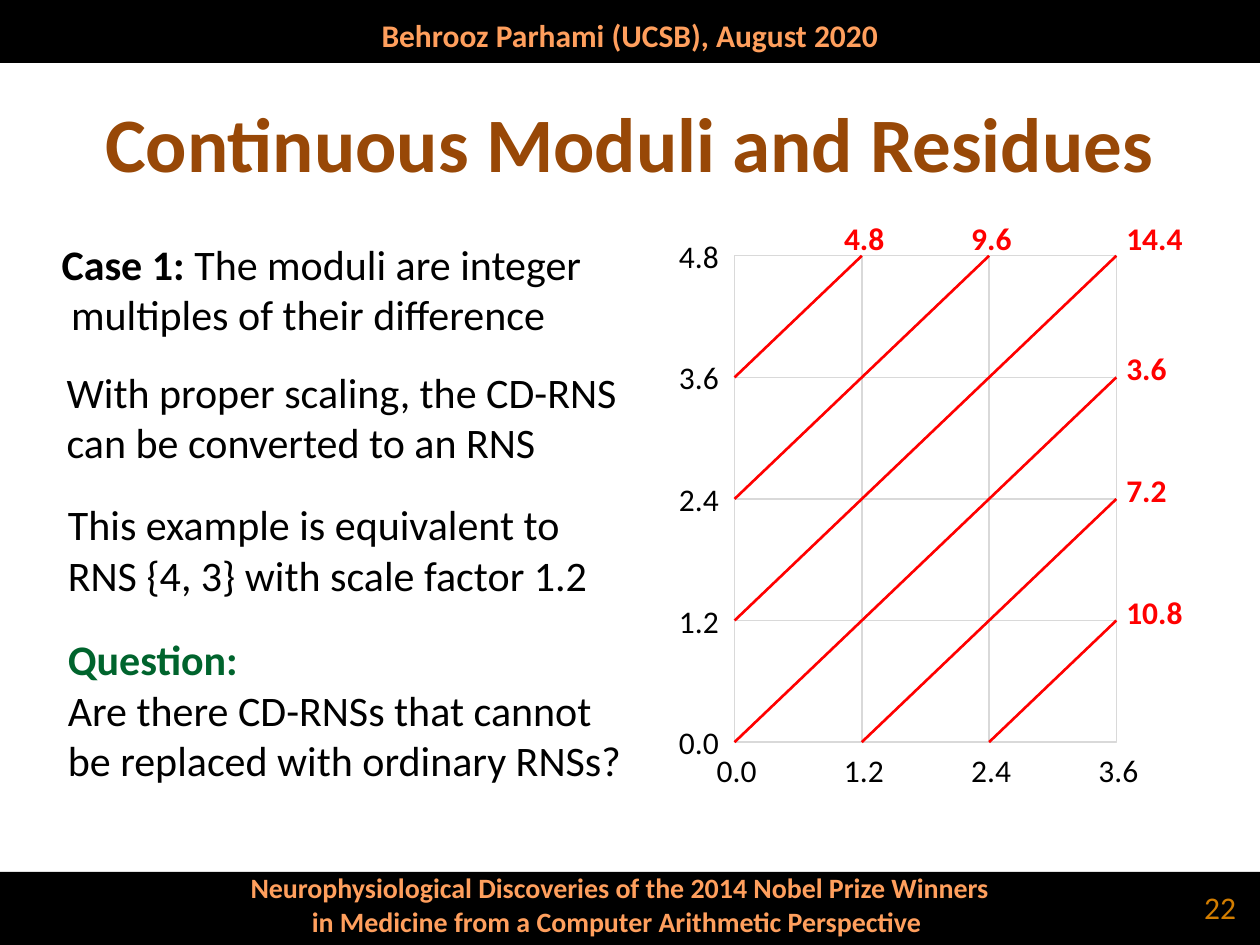
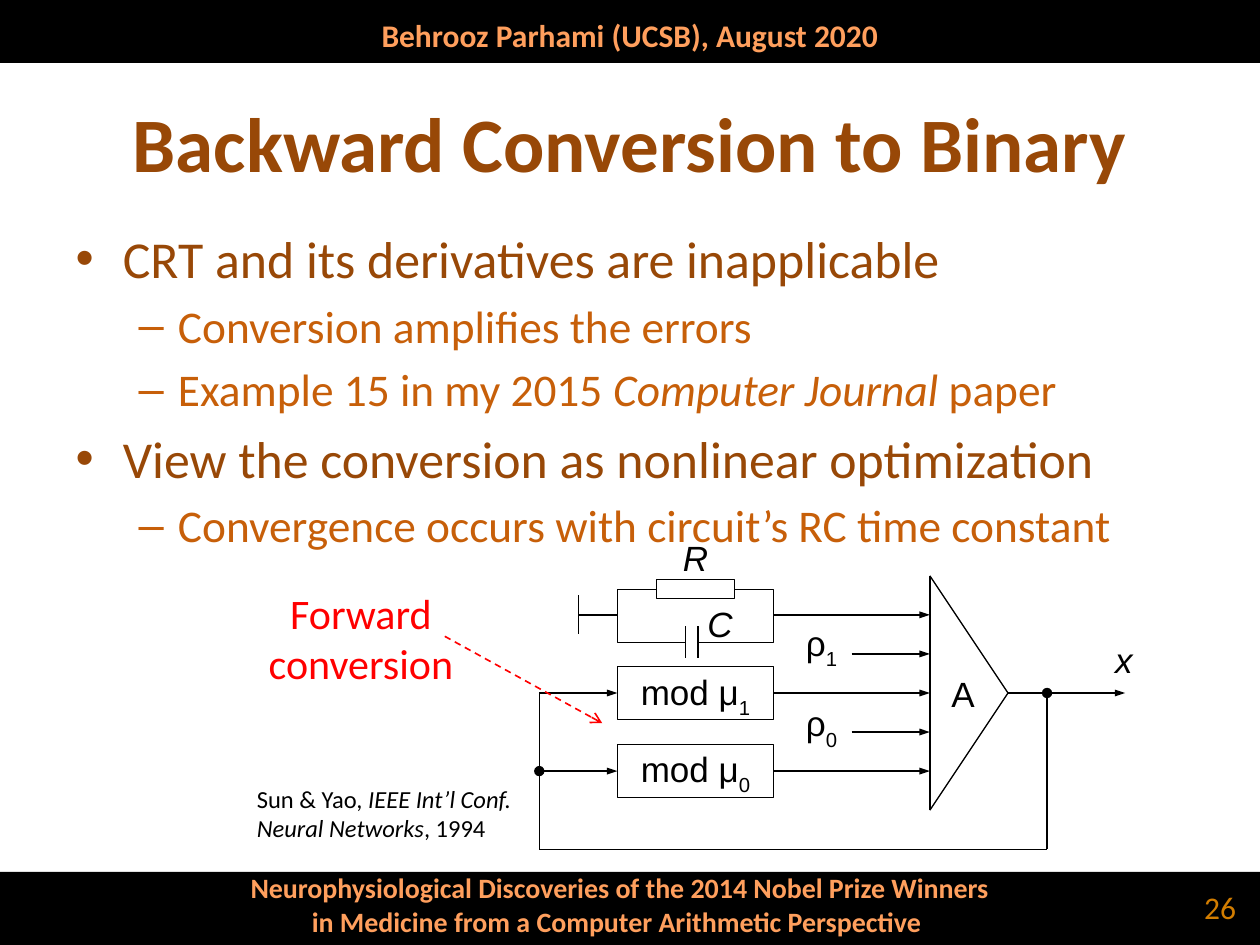
"""Build two lecture slides on residue number systems with continuous moduli."""
import pptx
import pptx.dml.color
import pptx.enum.dml
import pptx.enum.shapes
import pptx.enum.text
import pptx.oxml
import pptx.oxml.ns
import pptx.util

COLOURS = {
    "black": "000000", "white": "FFFFFF", "band text": "FF9F5D", "title": "984807",
    "detail": "C75F09", "number": "D27D00", "grid": "D9D9D9", "red": "FF0000", "green": "00642D",
}
RGB = {name: pptx.dml.color.RGBColor.from_string(code) for name, code in COLOURS.items()}
LEFT, CENTER, RIGHT = (pptx.enum.text.PP_ALIGN.LEFT, pptx.enum.text.PP_ALIGN.CENTER,
                       pptx.enum.text.PP_ALIGN.RIGHT)
TOP, MIDDLE = pptx.enum.text.MSO_ANCHOR.TOP, pptx.enum.text.MSO_ANCHOR.MIDDLE
WIDTH, HEIGHT = 10, 7.5
FOOTER_TOP = 6.92


def write(shape, paragraphs, size, colour="black", font="Calibri", align=LEFT, anchor=TOP):
    """Fill a shape with paragraphs, each a list of (text, style words) runs."""
    frame = shape.text_frame
    frame.word_wrap = True
    frame.auto_size = pptx.enum.text.MSO_AUTO_SIZE.NONE
    frame.vertical_anchor = anchor
    for index, runs in enumerate(paragraphs):
        paragraph = frame.paragraphs[0] if index == 0 else frame.add_paragraph()
        paragraph.alignment = align
        for text, style in runs:
            run = paragraph.add_run()
            run.text = text
            run.font.name = font
            run.font.size = pptx.util.Pt(size)
            run.font.bold = "bold" in style
            run.font.italic = "italic" in style
            run.font.color.rgb = RGB["green" if "green" in style else colour]
            if "sub" in style:
                run.font._element.set("baseline", "-30000")
    return frame


def draw(slide, start, end, line="black", weight=0.75, fill=None, head=None, tail=None):
    """Draw a filled rectangle between two corners, or a line when there is no fill."""
    (x1, y1), (x2, y2) = [[pptx.util.Inches(v) for v in point] for point in (start, end)]
    if fill:
        shape = slide.shapes.add_shape(pptx.enum.shapes.MSO_SHAPE.RECTANGLE,
                                       x1, y1, x2 - x1, y2 - y1)
        shape.shadow.inherit = False
        shape.fill.solid()
        shape.fill.fore_color.rgb = RGB[fill]
    else:
        shape = slide.shapes.add_connector(pptx.enum.shapes.MSO_CONNECTOR.STRAIGHT, x1, y1, x2, y2)
    if line:
        shape.line.color.rgb = RGB[line]
        shape.line.width = pptx.util.Pt(weight)
    else:
        shape.line.fill.background()
    for tag, kind in (("headEnd", head), ("tailEnd", tail)):
        if kind:
            tip = pptx.oxml.parse_xml(f'<a:{tag} {pptx.oxml.ns.nsdecls("a")} type="{kind}"/>')
            tip.set("w", "sm" if kind == "triangle" else "med")
            shape.line._get_or_add_ln().append(tip)
    if not fill:
        shape.element.spPr.append(
            pptx.oxml.parse_xml(f'<a:effectLst {pptx.oxml.ns.nsdecls("a")}/>'))
    return shape


deck = pptx.Presentation()
deck.slide_width, deck.slide_height = pptx.util.Inches(WIDTH), pptx.util.Inches(HEIGHT)
residues = deck.slides.add_slide(deck.slide_layouts[5])
conversion = deck.slides.add_slide(deck.slide_layouts[1])

header_band = draw(residues, (0, 0), (WIDTH, 0.5), line=None, fill="black")
footer_band = draw(residues, (0, FOOTER_TOP), (WIDTH, HEIGHT), line=None, fill="black")
event = residues.shapes.add_textbox(*map(pptx.util.Inches, (0, 0.03, WIDTH, 0.5)))
write(event, [[("Behrooz Parhami (UCSB), August 2020", "bold")]],
      18, "band text", align=CENTER, anchor=MIDDLE)
lecture = residues.shapes.add_textbox(*map(pptx.util.Inches, (0.92, 6.86, 8, 0.64)))
write(lecture, [[("Neurophysiological Discoveries of the 2014 Nobel Prize Winners", "bold")],
                [("in Medicine from a Computer Arithmetic Perspective ", "bold")]],
      16, "band text", align=CENTER)
for number, shared in enumerate((header_band, footer_band, event, lecture), 101):
    shared.element.nvSpPr.cNvPr.set("id", str(number))
    deck.slide_master.shapes.element.append(shared.element)

for slide, heading, page in ((residues, "Continuous Moduli and Residues", "22"),
                             (conversion, "Backward Conversion to Binary", "26")):
    title = slide.shapes.title
    title.left, title.top, title.width, title.height = map(
        pptx.util.Inches, (0, 0.5, WIDTH, 1.25))
    write(title, [[(heading, "bold")]], 44, "title", align=CENTER, anchor=MIDDLE)
    page_number = slide.shapes.add_textbox(*map(pptx.util.Inches, (7.58, 7, 2.33, 0.4)))
    write(page_number, [[(page, "")]], 18, "number", align=RIGHT, anchor=MIDDLE)

COLUMNS, ROWS, SCALE = 3, 4, 1.2
column_x = [5.83 + 1.01 * column for column in range(COLUMNS + 1)]
row_y = [5.89 - 0.965 * row for row in range(ROWS + 1)]
for row in range(ROWS):
    for column in range(COLUMNS):
        draw(residues, (column_x[column], row_y[row + 1]), (column_x[column + 1], row_y[row]),
             line="grid", fill="white")

ticks = [(x - 0.24, 5.91, column) for column, x in enumerate(column_x)]
ticks += [(5.29, y - 0.2, row) for row, y in enumerate(row_y)]
for left, top, step in ticks:
    tick = residues.shapes.add_textbox(*map(pptx.util.Inches, (left, top, 0.6, 0.4)))
    write(tick, [[(f"{step * SCALE:.1f}", "")]], 18)

for offset in range(1 - COLUMNS, ROWS):
    first_column, first_row = max(0, -offset), max(0, offset)
    last_column, last_row = min(COLUMNS, ROWS - offset), min(ROWS, COLUMNS + offset)
    x, y = column_x[last_column], row_y[last_row]
    draw(residues, (column_x[first_column], row_y[first_row]), (x, y), line="red", weight=1.5)
    count = next(n for n in range(1, COLUMNS * ROWS + 1)
                 if n % COLUMNS == last_column % COLUMNS and n % ROWS == last_row % ROWS)
    left = x - (0.02 if last_column == COLUMNS else 0.24)
    top = y - (0.34 if last_row == ROWS else 0.27)
    reached = residues.shapes.add_textbox(*map(pptx.util.Inches, (left, top, 0.75, 0.4)))
    write(reached, [[(f"{count * SCALE:.1f}", "bold")]], 18, "red")

remarks = [
    (0.39, 1.84, 0.91, [[("Case 1: ", "bold"), ("The moduli are integer", "")],
                        [(" multiples of their difference", "")]]),
    (0.43, 2.86, 0.91, [[("With proper scaling, the CD-RNS", "")],
                        [("can be converted to an RNS", "")]]),
    (0.44, 3.91, 0.91, [[("This example is equivalent to", "")],
                        [("RNS {4, 3} with scale factor 1.2", "")]]),
    (0.44, 4.98, 1.72, [[("Question:", "bold green")],
                        [("Are there CD-RNSs that cannot be replaced with ordinary RNSs?", "")]]),
]
for left, top, height, paragraphs in remarks:
    remark = residues.shapes.add_textbox(*map(pptx.util.Inches, (left, top, 4.68, height)))
    write(remark, paragraphs, 24)

points = [
    (0, [("CRT and its derivatives are inapplicable", "")]),
    (1, [("Conversion amplifies the errors", "")]),
    (1, [("Example 15 in my 2015 ", ""), ("Computer Journal ", "italic"), ("paper", "")]),
    (0, [("View the conversion as nonlinear optimization", "")]),
    (1, [("Convergence occurs with circuit’s RC time constant", "")]),
]
argument = conversion.placeholders[1]
argument.left, argument.top, argument.width, argument.height = map(
    pptx.util.Inches, (0.5, 1.75, 9.08, 2.66))
frame = write(argument, [runs for level, runs in points], 29.6, "title")
for paragraph, (level, runs) in zip(frame.paragraphs, points):
    paragraph.level = level
    if level:
        for run in paragraph.runs:
            run.font.size = pptx.util.Pt(25.9)
            run.font.color.rgb = RGB["detail"]

STEP = 0.31
circuit_x = [4.28 + STEP * column for column in range(16)]
circuit_y = [4.57 + STEP * row for row in range(8)]
wires = [
    ((6, 1), (10, 1), None, "triangle"),
    ((8, 2), (10, 2), None, "triangle"),
    ((6, 3), (10, 3), None, "triangle"),
    ((8, 4), (10, 4), None, "triangle"),
    ((6, 5), (10, 5), None, "triangle"),
    ((10, 0), (12, 3), None, None),
    ((10, 6), (12, 3), None, None),
    ((10, 0), (10, 6), None, None),
    ((12, 3), (15, 3), None, "triangle"),
    ((13, 3), (13, 7), "oval", None),
    ((13, 7), (0, 7), None, None),
    ((0, 7), (0, 3), None, None),
    ((0, 3), (2, 3), None, "triangle"),
    ((0, 5), (2, 5), "oval", "triangle"),
    ((2, 1), (1, 1), None, None),
    ((1, 0.5), (1, 1.5), None, None),
]
for start, end, head, tail in wires:
    ends = [(circuit_x[0] + STEP * column, circuit_y[0] + STEP * row) for column, row in (start, end)]
    draw(conversion, *ends, head=head, tail=tail)

block_left, block_right = circuit_x[2], circuit_x[6]
for top in (4.68, 5.29, 5.91):
    draw(conversion, (block_left, top), (block_right, top + 0.42), fill="white")
draw(conversion, (circuit_x[3], 4.6), (circuit_x[5], 4.75), fill="white")
draw(conversion, (5.44, 4.97), (5.54, 5.22), line=None, fill="white")
for plate_x in (5.44, 5.54):
    draw(conversion, (plate_x, 4.97), (plate_x, 5.22))

symbols = [
    (6.21, 4.93, 0.62, [("ρ", ""), ("1", "sub")]),
    (6.21, 5.57, 0.62, [("ρ", ""), ("0", "sub")]),
    (4.59, 5.32, 1.86, [("mod μ", ""), ("1", "sub")]),
    (4.59, 5.93, 1.86, [("mod μ", ""), ("0", "sub")]),
    (7.18, 5.34, 0.93, [("A", "")]),
    (8.61, 5.07, 0.62, [("x", "italic")]),
    (5.21, 4.26, 0.62, [("R", "italic")]),
    (5.25, 4.78, 0.93, [("C", "italic")]),
]
for left, top, width, runs in symbols:
    symbol = conversion.shapes.add_textbox(*map(pptx.util.Inches, (left, top, width, 0.49)))
    frame = write(symbol, [runs], 20, font="Arial", align=CENTER)
    frame.margin_left = frame.margin_right = frame.margin_top = frame.margin_bottom = 0

citation = conversion.shapes.add_textbox(*map(pptx.util.Inches, (1.94, 6.17, 2.35, 0.81)))
write(citation, [[("Sun & Yao,", ""), (" IEEE Int’l Conf. Neural Networks", "italic"),
                  (", 1994", "")]], 14)
forward = conversion.shapes.add_textbox(*map(pptx.util.Inches, (1.68, 4.61, 2.37, 1.31)))
write(forward, [[("Forward conversion", "")]], 24, "red", align=CENTER)
pointer = draw(conversion, (3.53, 5.05), (4.78, 5.74), line="red", weight=0.94, tail="arrow")
pointer.line.dash_style = pptx.enum.dml.MSO_LINE.DASH

deck.save("out.pptx")
